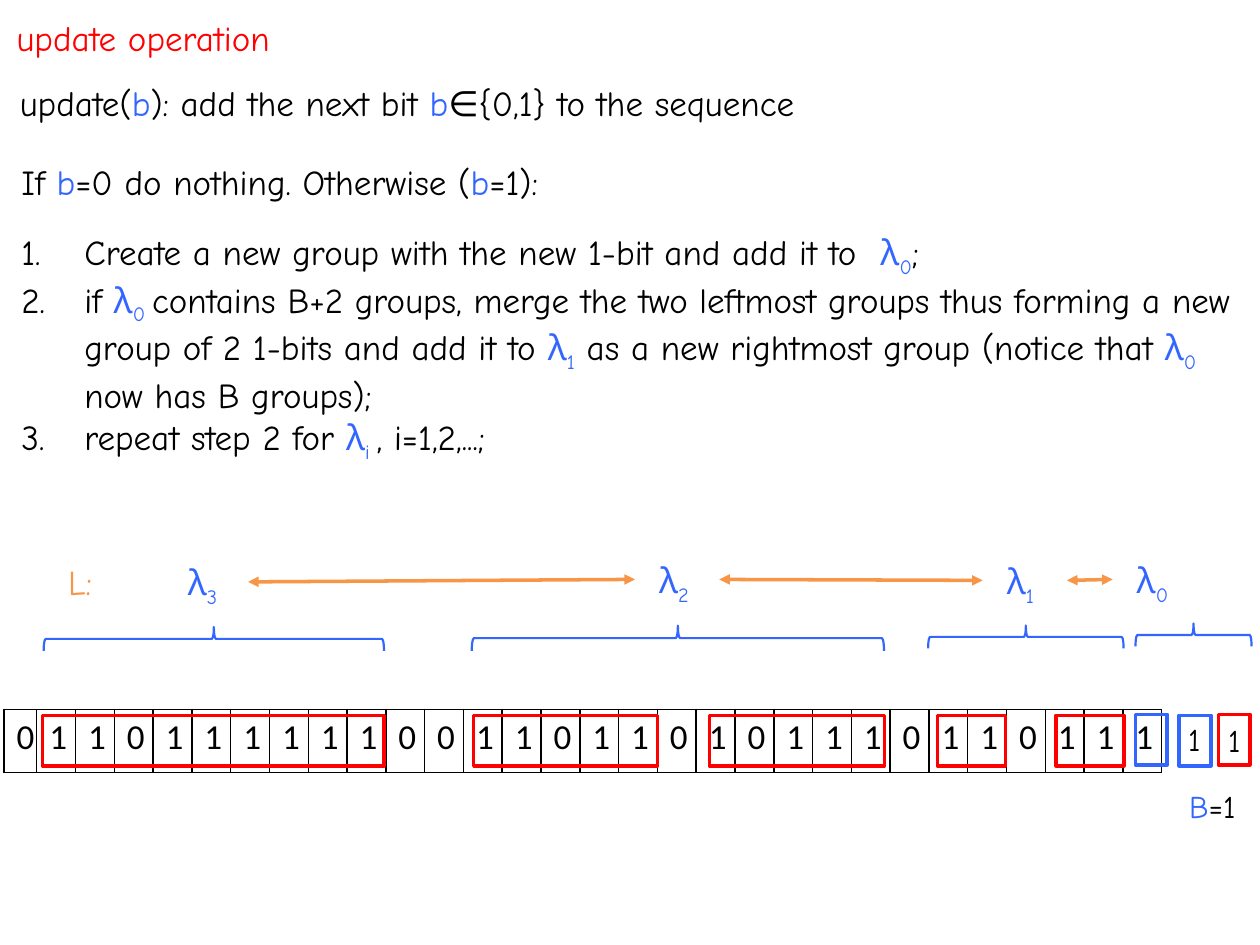
from dataclasses import dataclass
from typing import NamedTuple

from lxml import etree
from pptx import Presentation
from pptx.dml.color import RGBColor
from pptx.enum.shapes import MSO_CONNECTOR, MSO_SHAPE
from pptx.enum.text import MSO_ANCHOR, MSO_AUTO_SIZE, PP_ALIGN
from pptx.oxml.ns import qn
from pptx.util import Cm, Pt

RECT, BRACE = MSO_SHAPE.RECTANGLE, MSO_SHAPE.LEFT_BRACE
STRAIGHT = MSO_CONNECTOR.STRAIGHT
LEFT, TOP = PP_ALIGN.LEFT, MSO_ANCHOR.TOP
NO_FIT = MSO_AUTO_SIZE.NONE


@dataclass(frozen=True)
class Theme:
    font: str = "Comic Neue"
    digit: str = "Calibri"
    black: str = "000000"
    red: str = "FF0000"
    blue: str = "3366FF"
    orange: str = "F79646"
    body: float = 20
    small: float = 18
    thick: float = 2
    thin: float = 1.25


THEME = Theme()


class Run(NamedTuple):
    text: str
    color: str = THEME.black
    sub: bool = False


class Area(NamedTuple):
    """Left, top, width and height in centimetres."""
    x: float
    y: float
    w: float
    h: float


class Label(NamedTuple):
    x: float
    y: float
    index: str


class Frame(NamedTuple):
    x: float
    w: float
    color: str = THEME.red
    y: float = 14.42


def blue(text: str) -> Run:
    return Run(text, THEME.blue)


def group(index: str, lead: str = "") -> list[Run]:
    """A blue lambda with a subscript."""
    return [blue(lead + "λ"), Run(index, THEME.blue, True)]


LINE_H, LABEL_W, BOX_H, BOX_W = 1.12, 1.7, 1.02, 0.64
TITLE = Area(0.08, 0.2, 25.27, LINE_H)
INTRO = [
    (Area(0.15, 1.52, 25.12, LINE_H),
     [Run("update("), blue("b"), Run("): add the next bit "), blue("b"),
      Run("∈{0,1} to the sequence")]),
    (Area(0.18, 3.12, 25.12, LINE_H),
     [Run("If "), blue("b"), Run("=0 do nothing. Otherwise ("), blue("b"),
      Run("=1):")]),
]
STEPS = [
    [Run("Create a new group with the new 1-bit and add it to  "),
     *group("0"), Run(";")],
    [Run("if "), *group("0 "),
     Run("contains B+2 groups, merge the two leftmost groups thus forming "
         "a new group of 2 1-bits and add it to "), *group("1"),
     Run(" as a new rightmost group (notice that "), *group("0 "),
     Run("now has B groups);")],
    [Run("repeat step 2 for "), *group("i "), Run(", i=1,2,...;")],
]
BITS = "011011111100110110101110110111"
FIRST_W, REST_W = 0.66, 22.7
FRAMES = [
    Frame(0.86, 6.88), Frame(9.55, 3.71), Frame(14.3, 3.53),
    Frame(18.9, 1.37), Frame(21.29, 1.37),
    Frame(22.89, BOX_W, THEME.blue, 14.4),
    Frame(23.77, BOX_W, THEME.blue), Frame(24.56, BOX_W, THEME.red, 14.4),
]
LABELS = [Label(3.3, 11.18, "3"), Label(12.8, 11.13, "2"),
          Label(19.81, 11.15, "1"), Label(22.43, 11.13, "0")]
BRACES = [Area(0.88, 12.64, 6.86, 0.48), Area(9.51, 12.61, 8.31, 0.51),
          Area(18.71, 12.61, 3.94, 0.46), Area(22.89, 12.57, 2.34, 0.46)]


def lengths(area: Area) -> list[Cm]:
    return [Cm(part) for part in area]


def style(run, color: str, size: float, font: str = THEME.font) -> None:
    run.font.name, run.font.size = font, Pt(size)
    run.font.color.rgb = RGBColor.from_string(color)


def fill_runs(para, runs: list[Run], size: float) -> None:
    for part in runs:
        run = para.add_run()
        run.text = part.text
        style(run, part.color, size)
        if part.sub:
            run.font._element.set("baseline", "-25000")


def add_text(slide, area: Area, runs: list[Run], size: float = THEME.body):
    frame = slide.shapes.add_textbox(*lengths(area)).text_frame
    frame.word_wrap = True
    fill_runs(frame.paragraphs[0], runs, size)
    return frame


def number(para) -> None:
    props = para._p.get_or_add_pPr()
    props.set("marL", str(Cm(1.27)))
    props.set("indent", str(Cm(-1.27)))
    etree.SubElement(props, qn("a:buFont"), typeface="+mj-lt")
    etree.SubElement(props, qn("a:buAutoNum"), type="arabicPeriod")


def add_title(slide) -> None:
    title = slide.shapes.title
    title.left, title.top, title.width, title.height = lengths(TITLE)
    frame = title.text_frame
    frame.text = "update operation"
    frame.vertical_anchor, frame.auto_size = TOP, NO_FIT
    para = frame.paragraphs[0]
    para.alignment = LEFT
    style(para.runs[0], THEME.red, THEME.body)


def add_steps(slide) -> None:
    first, *rest = STEPS
    frame = add_text(slide, Area(0.18, 4.52, 25.12, 4.52), first)
    for runs in rest:
        fill_runs(frame.add_paragraph(), runs, THEME.body)
    for para in frame.paragraphs:
        number(para)


def add_border(cell) -> None:
    props = cell._tc.get_or_add_tcPr()
    for spot, side in enumerate(("a:lnL", "a:lnR", "a:lnT", "a:lnB")):
        line = etree.Element(qn(side), w=str(Pt(1)))
        fill = etree.SubElement(line, qn("a:solidFill"))
        etree.SubElement(fill, qn("a:srgbClr"), val=THEME.black)
        props.insert(spot, line)


def add_bits(slide) -> None:
    area = Area(0.08, 14.3, FIRST_W + REST_W, 1.27)
    table = slide.shapes.add_table(1, len(BITS), *lengths(area)).table
    table.first_row = table.horz_banding = False
    for spot, bit in enumerate(BITS):
        width = REST_W / (len(BITS) - 1) if spot else FIRST_W
        table.columns[spot].width = Cm(width)
        cell = table.cell(0, spot)
        cell.text = bit
        style(cell.text_frame.paragraphs[0].runs[0], THEME.black,
              THEME.body, THEME.digit)
        cell.fill.background()
        add_border(cell)


def add_outline(slide, kind, area: Area, color: str, width: float):
    shape = slide.shapes.add_shape(kind, *lengths(area))
    shape.shadow.inherit = False
    shape.fill.background()
    shape.line.color.rgb = RGBColor.from_string(color)
    shape.line.width = Pt(width)
    return shape


def add_brace(slide, area: Area) -> None:
    """Draw a brace that points up and fills the area once turned."""
    x, y, w, h = area
    upright = Area(x + (w - h) / 2, y + (h - w) / 2, h, w)
    add_outline(slide, BRACE, upright, THEME.blue, THEME.thin).rotation = 90


def add_arrow(slide, left: Label, right: Label) -> None:
    drop = 0.55
    arrow = slide.shapes.add_connector(
        STRAIGHT, Cm(left.x + LABEL_W), Cm(left.y + drop),
        Cm(right.x), Cm(right.y + drop))
    arrow.line.color.rgb = RGBColor.from_string(THEME.orange)
    arrow.line.width = Pt(THEME.thick)
    line = arrow.line._get_or_add_ln()
    for end in ("a:headEnd", "a:tailEnd"):
        etree.SubElement(line, qn(end), type="triangle")
    etree.SubElement(arrow._element.spPr, qn("a:effectLst"))


def main() -> None:
    deck = Presentation()
    deck.slide_width, deck.slide_height = Cm(25.4), Cm(19.05)
    slide = deck.slides.add_slide(deck.slide_layouts[5])
    add_title(slide)
    for area, runs in INTRO:
        add_text(slide, area, runs)
    add_steps(slide)
    add_bits(slide)
    add_text(slide, Area(0.89, 11.18, LABEL_W, LINE_H),
             [Run(" L:", THEME.orange)])
    for label in LABELS:
        add_text(slide, Area(label.x, label.y, LABEL_W, LINE_H),
                 group(label.index, " "))
    for left, right in zip(LABELS, LABELS[1:]):
        add_arrow(slide, left, right)
    for area in BRACES:
        add_brace(slide, area)
    for x, y in ((23.7, 14.4), (24.51, 14.42)):
        add_text(slide, Area(x, y, 0.84, BOX_H), [Run("1")], THEME.small)
    for x, w, color, y in FRAMES:
        add_outline(slide, RECT, Area(x, y, w, BOX_H), color, THEME.thick)
    add_text(slide, Area(23.72, 15.75, 1.73, BOX_H),
             [blue("B"), Run("=1")], THEME.small)
    deck.save("out.pptx")


if __name__ == "__main__":
    main()
